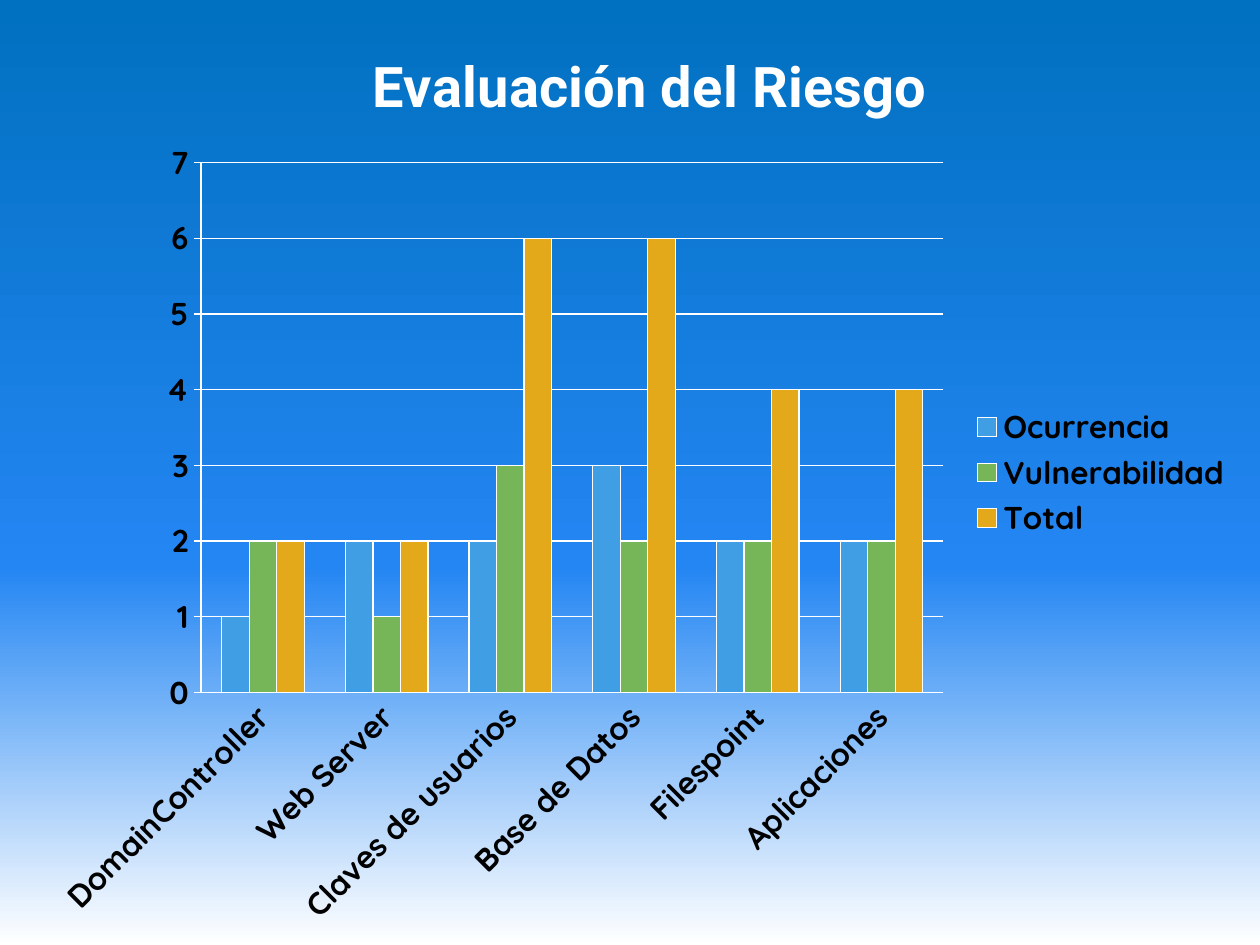
from copy import deepcopy

from lxml import etree
from pptx import Presentation
from pptx.chart.data import CategoryChartData
from pptx.dml.color import RGBColor
from pptx.enum.chart import XL_CHART_TYPE, XL_LEGEND_POSITION, XL_TICK_MARK
from pptx.oxml.ns import qn
from pptx.util import Cm, Pt

COLUMNS = XL_CHART_TYPE.COLUMN_CLUSTERED
RIGHT = XL_LEGEND_POSITION.RIGHT
NO_TICK = XL_TICK_MARK.NONE
OUTSIDE = XL_TICK_MARK.OUTSIDE
WHITE = "FFFFFF"
BLACK = "000000"
BACKGROUND = [(0, "0070C0"), (0.6, "2486F3"), (1, WHITE)]
ASSETS = ["DomainController", "Web Server", "Claves de usuarios",
          "Base de Datos", "Filespoint", "Aplicaciones"]
RATINGS = [
    ("Ocurrencia", [1, 2, 2, 3, 2, 2], "3F9EE4"),
    ("Vulnerabilidad", [2, 1, 3, 2, 2, 2], "77B559"),
    ("Total", [2, 2, 6, 6, 4, 4], "E4A81B"),
]


def color(value):
    return RGBColor.from_string(value)


def style_font(font, name, size, value):
    font.name = name
    font.size = Pt(size)
    font.bold = True
    font.color.rgb = color(value)


def style_line(line):
    line.color.rgb = color(WHITE)
    line.width = Pt(0.75)


def paint_background(slide):
    fill = slide.background.fill
    fill.gradient()
    fill.gradient_angle = 270
    stop_list = slide.element.xpath(".//a:gsLst")[0]
    stop_list.append(deepcopy(stop_list[-1]))
    for stop, (position, value) in zip(fill.gradient_stops, BACKGROUND):
        stop.position = position
        stop.color.rgb = color(value)


def set_layout(part, index, settings):
    for previous in part.findall(qn("c:layout")):
        part.remove(previous)
    layout = etree.Element(qn("c:layout"))
    manual = etree.SubElement(layout, qn("c:manualLayout"))
    for tag, value in settings.items():
        etree.SubElement(manual, qn(f"c:{tag}")).set("val", str(value))
    part.insert(index, layout)


def add_risk_chart(slide, left, top, width, height):
    ratings = CategoryChartData(number_format="0")
    ratings.categories = ASSETS
    for name, values, _ in RATINGS:
        ratings.add_series(name, values)
    chart = slide.shapes.add_chart(COLUMNS, left, top, width, height, ratings).chart
    style_font(chart.font, "Quicksand", 18, BLACK)

    chart.has_title = True
    heading = chart.chart_title.text_frame
    heading.text = "Evaluación del Riesgo"
    style_font(heading.paragraphs[0].font, "Roboto", 32, WHITE)

    chart.has_legend = True
    chart.legend.position = RIGHT
    chart.legend.include_in_layout = False

    plot = chart.plots[0]
    plot.gap_width = 150
    plot.overlap = 0
    plot.vary_by_categories = False
    for series, (_, _, value) in zip(plot.series, RATINGS):
        series.format.fill.solid()
        series.format.fill.fore_color.rgb = color(value)
        style_line(series.format.line)

    assets, scores = chart.category_axis, chart.value_axis
    assets.major_tick_mark = NO_TICK
    scores.major_tick_mark = OUTSIDE
    scores.minimum_scale, scores.maximum_scale, scores.major_unit = 0, 7, 1
    scores.has_major_gridlines = True
    style_line(scores.major_gridlines.format.line)
    for axis in (assets, scores):
        style_line(axis.format.line)
        style_font(axis.tick_labels.font, "Quicksand", 18, BLACK)
    label_body = chart.element.xpath(".//c:catAx/c:txPr/a:bodyPr")[0]
    label_body.set("rot", "-2700000")
    label_body.set("vert", "horz")

    edge = {"xMode": "edge", "yMode": "edge"}
    title = chart.element.xpath("c:chart/c:title")[0]
    set_layout(title, 1, edge | {"x": 0.27, "y": 0.04})
    plot_area = chart.element.xpath("c:chart/c:plotArea")[0]
    set_layout(plot_area, 0, {"layoutTarget": "inner"} | edge
               | {"x": 0.137, "y": 0.172, "w": 0.613, "h": 0.561})
    legend = chart.element.xpath("c:chart/c:legend")[0]
    set_layout(legend, 1, edge | {"x": 0.77, "y": 0.425, "w": 0.22, "h": 0.15})


def main():
    deck = Presentation()
    deck.slide_width, deck.slide_height = Cm(25.4), Cm(19.05)
    slide = deck.slides.add_slide(deck.slide_layouts[6])
    paint_background(slide)
    add_risk_chart(slide, Cm(0.71), Cm(0), Cm(24.41), Cm(19.05))
    deck.save("out.pptx")


if __name__ == "__main__":
    main()
